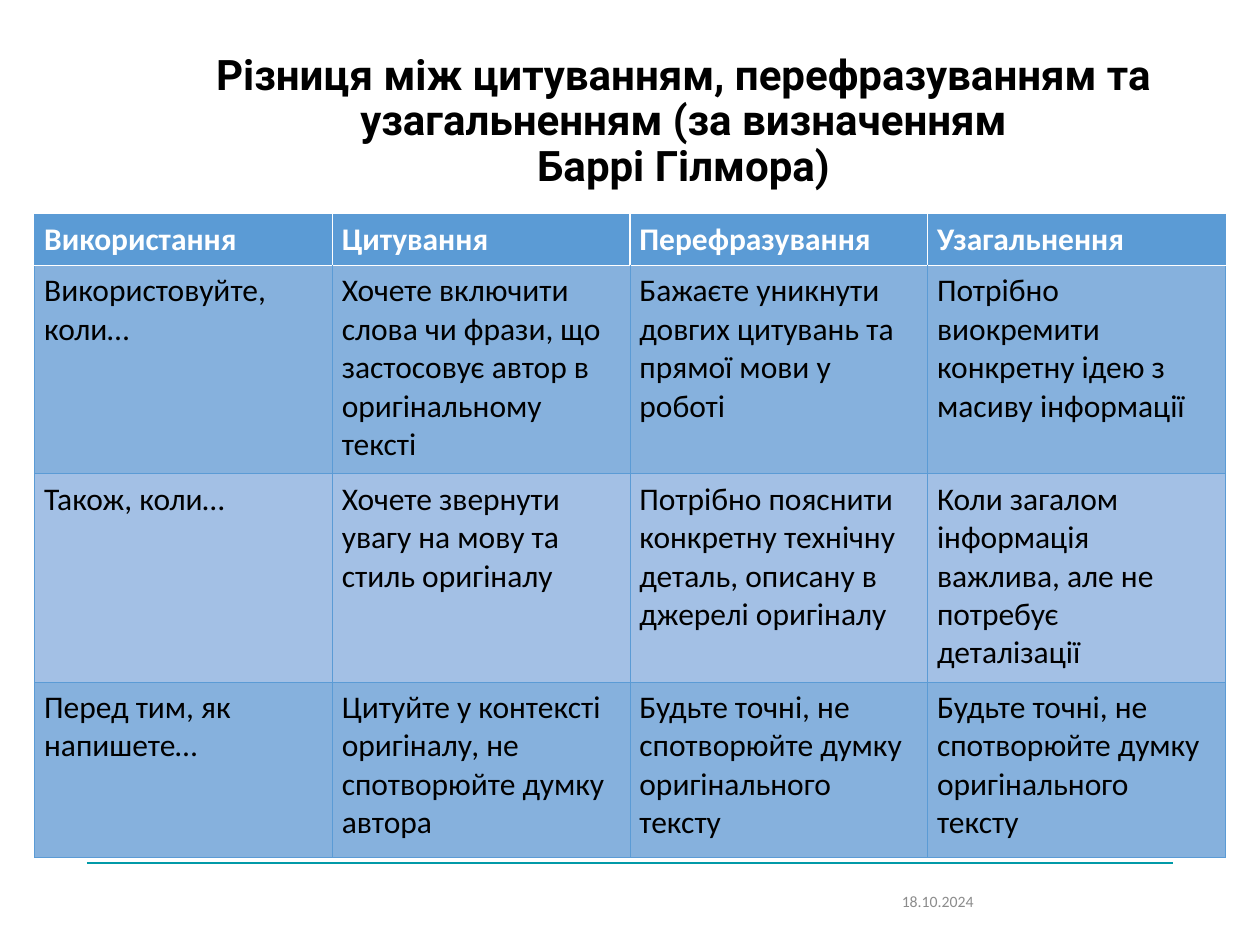
from lxml.etree import SubElement
from pptx import Presentation
from pptx.dml.color import RGBColor
from pptx.enum.shapes import MSO_CONNECTOR
from pptx.enum.text import MSO_ANCHOR, MSO_AUTO_SIZE, PP_ALIGN
from pptx.oxml import parse_xml
from pptx.oxml.ns import nsdecls, qn
from pptx.util import Cm, Pt

# Content: each cell is a list of paragraphs
TITLE = ["Різниця між цитуванням, перефразуванням та узагальненням (за визначенням",
         "Баррі Гілмора)"]
DATE = "18.10.2024"
EXACT = ["Будьте точні, не", "спотворюйте думку оригінального тексту"]
ROWS = [
    [["Використання"], ["Цитування"], ["Перефразування"], ["Узагальнення"]],
    [["Використовуйте, коли…"],
     ["Хочете включити слова чи фрази, що застосовує автор в оригінальному тексті"],
     ["Бажаєте уникнути довгих цитувань та", "прямої мови у роботі"],
     ["Потрібно виокремити", "конкретну ідею з масиву інформації"]],
    [["Також, коли…"],
     ["Хочете звернути увагу на мову та стиль оригіналу"],
     ["Потрібно пояснити конкретну технічну деталь, описану в джерелі оригіналу"],
     ["Коли загалом інформація важлива, але не потребує", "деталізації"]],
    [["Перед тим, як напишете…"],
     ["Цитуйте у контексті", "оригіналу, не спотворюйте думку автора"],
     EXACT, EXACT],
]
WIDE = 6
TALL = [1.03, 4.2, 4.2, 3.53]

BLACK = RGBColor(0x00, 0x00, 0x00)
WHITE = RGBColor(0xFF, 0xFF, 0xFF)
GREY = RGBColor(0x8C, 0x8C, 0x8C)
TEAL = RGBColor(0x01, 0x9A, 0xA8)
BLUE = RGBColor(0x5B, 0x9B, 0xD5)
MID = RGBColor(0x86, 0xB1, 0xDD)
PALE = RGBColor(0xA3, 0xC0, 0xE5)
FILLS = [BLUE, MID, PALE, MID]


def add_run(para, text, size, color, face="Calibri", bold=False):
    run = para.add_run()
    run.text = text
    font = run.font
    font.size, font.name, font.bold = Pt(size), face, bold
    font.color.rgb = color


def set_edges(cell, edges):
    """Give the cell its lines: left, right, top, bottom as (color, points)."""
    props = cell._tc.get_or_add_tcPr()
    for place, (side, (color, width)) in enumerate(zip("LRTB", edges)):
        props.insert(place, parse_xml(
            f'<a:ln{side} {nsdecls("a")} w="{Pt(width)}"><a:solidFill>'
            f'<a:srgbClr val="{color}"/></a:solidFill></a:ln{side}>'))


def fill_cell(cell, paras, row):
    head = row == 0
    cell.margin_left = cell.margin_right = Cm(0.19)
    cell.margin_top = cell.margin_bottom = Cm(0.13)
    cell.fill.solid()
    cell.fill.fore_color.rgb = FILLS[row]
    thin, rule = (BLUE, 0.5), (WHITE, 1)
    set_edges(cell, [thin, thin, rule if row == 1 else thin, rule if head else thin])
    frame = cell.text_frame
    for i, text in enumerate(paras):
        para = frame.add_paragraph() if i else frame.paragraphs[0]
        add_run(para, text, 18, WHITE if head else BLACK, bold=head)


deck = Presentation()
deck.slide_width, deck.slide_height = Cm(25.4), Cm(19.05)
slide = deck.slides.add_slide(deck.slide_layouts[5])
shapes = slide.shapes

# Footer line
line = shapes.add_connector(MSO_CONNECTOR.STRAIGHT, Cm(1.75), Cm(17.4), Cm(23.65), Cm(17.4))
line.line.color.rgb = TEAL
line.line.width = Pt(1.5)
SubElement(line._element.spPr, qn("a:effectLst"))

# Title
title = shapes.title
title.left, title.top, title.width, title.height = Cm(2.49), Cm(1.12), Cm(22.58), Cm(2.69)
frame = title.text_frame
frame.word_wrap = True
frame.auto_size = MSO_AUTO_SIZE.NONE
frame.vertical_anchor = MSO_ANCHOR.MIDDLE
para = frame.paragraphs[0]
para.alignment = PP_ALIGN.CENTER
para.line_spacing = 0.9
for i, text in enumerate(TITLE):
    if i:
        para.add_line_break()
    add_run(para, text, 24, BLACK, "Roboto", True)

# Date
date = shapes.add_textbox(Cm(17.93), Cm(17.65), Cm(5.72), Cm(1.02))
date.text_frame.word_wrap = True
date.text_frame.vertical_anchor = MSO_ANCHOR.MIDDLE
add_run(date.text_frame.paragraphs[0], DATE, 9, GREY)

# Table
cols = len(ROWS[0])
table = shapes.add_table(len(ROWS), cols, Cm(0.7), Cm(4.32),
                         Cm(WIDE * cols), Cm(sum(TALL))).table
for col in table.columns:
    col.width = Cm(WIDE)
for r, cells in enumerate(ROWS):
    table.rows[r].height = Cm(TALL[r])
    for c, paras in enumerate(cells):
        fill_cell(table.cell(r, c), paras, r)
    if r == 0:
        # The header has no lines between its cells
        for c in range(cols):
            props = table.cell(r, c)._tc.tcPr
            for side, inner in (("L", c > 0), ("R", c < cols - 1)):
                if inner:
                    props.remove(props.find(qn(f"a:ln{side}")))

deck.save("out.pptx")
